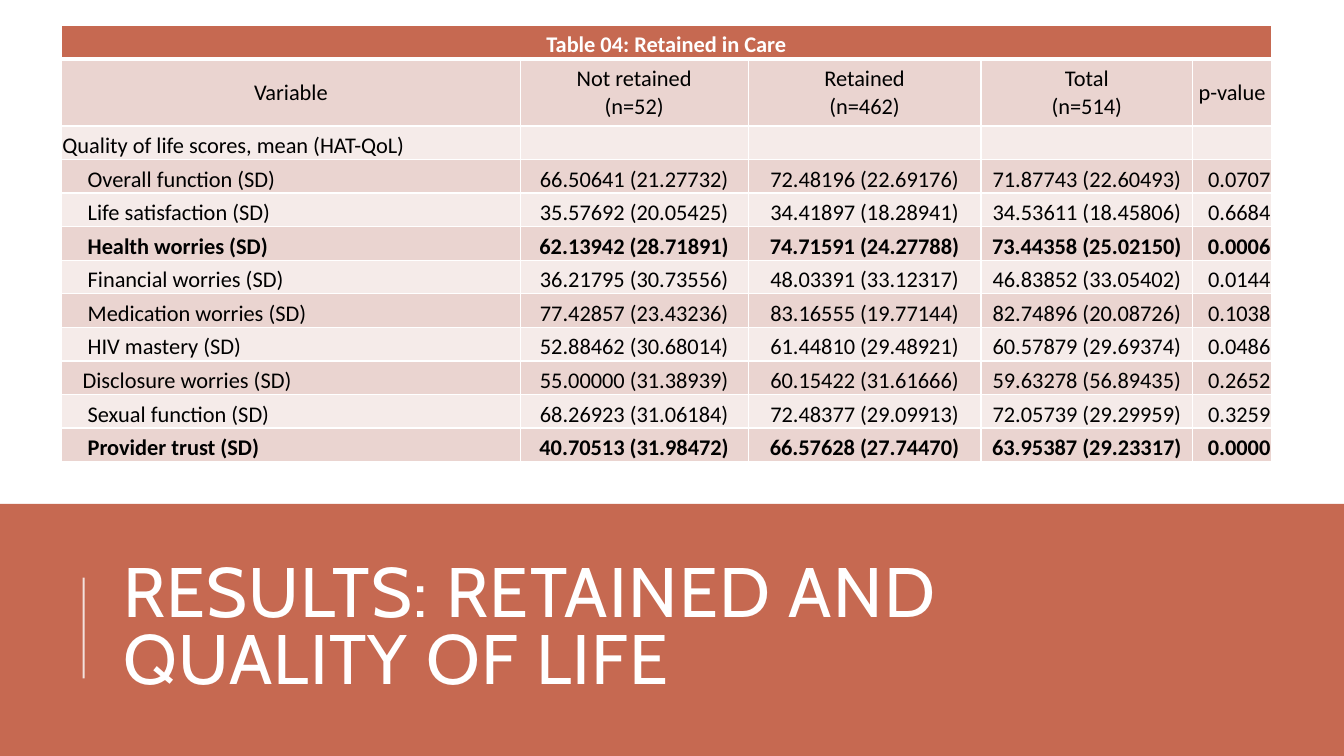
from lxml.etree import SubElement
from pptx import Presentation
from pptx.dml.color import RGBColor
from pptx.enum.shapes import MSO_CONNECTOR, MSO_SHAPE
from pptx.enum.text import MSO_ANCHOR, MSO_AUTO_SIZE, PP_ALIGN
from pptx.oxml import parse_xml
from pptx.oxml.ns import nsdecls, qn
from pptx.util import Inches, Pt

RUST = RGBColor(0xC6, 0x69, 0x51)
ROSE = RGBColor(0xEA, 0xD4, 0xD0)
PALE = RGBColor(0xF5, 0xEB, 0xE9)
WHITE = RGBColor(0xFF, 0xFF, 0xFF)
BLACK = RGBColor(0, 0, 0)

TITLE = "RESULTS: RETAINED AND QUALITY OF LIFE"
CAPTION = "Table 04: Retained in Care"
HEADS = ["Variable", "Not retained\n(n=52)", "Retained\n(n=462)", "Total\n(n=514)", "p-value"]
GROUP = ["Quality of life scores, mean (HAT-QoL)", "", "", "", ""]
SCORES = [
    ["Overall function (SD)", "66.50641 (21.27732)", "72.48196 (22.69176)", "71.87743 (22.60493)", "0.0707"],
    ["Life satisfaction (SD)", "35.57692 (20.05425)", "34.41897 (18.28941)", "34.53611 (18.45806)", "0.6684"],
    ["Health worries (SD)", "62.13942 (28.71891)", "74.71591 (24.27788)", "73.44358 (25.02150)", "0.0006"],
    ["Financial worries (SD)", "36.21795 (30.73556)", "48.03391 (33.12317)", "46.83852 (33.05402)", "0.0144"],
    ["Medication worries (SD)", "77.42857 (23.43236)", "83.16555 (19.77144)", "82.74896 (20.08726)", "0.1038"],
    ["HIV mastery (SD)", "52.88462 (30.68014)", "61.44810 (29.48921)", "60.57879 (29.69374)", "0.0486"],
    ["Disclosure worries (SD)", "55.00000 (31.38939)", "60.15422 (31.61666)", "59.63278 (56.89435)", "0.2652"],
    ["Sexual function (SD)", "68.26923 (31.06184)", "72.48377 (29.09913)", "72.05739 (29.29959)", "0.3259"],
    ["Provider trust (SD)", "40.70513 (31.98472)", "66.57628 (27.74470)", "63.95387 (29.23317)", "0.0000"],
]
WIDTHS = [4.55, 2.26, 2.31, 2.1, 0.78]
ALIGNS = [PP_ALIGN.LEFT] + [PP_ALIGN.CENTER] * 3 + [PP_ALIGN.RIGHT]
HEIGHT = Inches(4.33)


def apply(item, form):
    for name, value in form.items():
        setattr(item, name, value)


def style(para, size, face, color, bold=False):
    for run in para.runs:
        apply(run.font, {"size": Pt(size), "name": face, "bold": bold})
        run.font.color.rgb = color


def add_band(slide, width):
    band = slide.shapes.add_shape(MSO_SHAPE.RECTANGLE, 0, Inches(5), width, Inches(2.5))
    band.shadow.inherit = False
    band.fill.solid()
    band.fill.fore_color.rgb = RUST
    band.line.fill.background()
    slide.shapes.element.insert(2, band.element)


def set_title(slide):
    title = slide.shapes.title
    apply(title, {"left": Inches(1.12), "top": Inches(5.44),
                  "width": Inches(10.63), "height": Inches(1.64)})
    frame = title.text_frame
    frame.text = TITLE
    apply(frame, {"word_wrap": True, "auto_size": MSO_AUTO_SIZE.NONE,
                  "vertical_anchor": MSO_ANCHOR.MIDDLE})
    para = frame.paragraphs[0]
    apply(para, {"alignment": PP_ALIGN.LEFT, "line_spacing": 0.8})
    style(para, 50, "Cabin", WHITE)
    for props in title.element.iter(qn("a:rPr")):
        props.set("spc", "100")


def add_rule(slide):
    x = Inches(0.83)
    rule = slide.shapes.add_connector(MSO_CONNECTOR.STRAIGHT, x, Inches(6.73), x, Inches(5.73))
    rule.line.width = Pt(1.5)
    rule.line.color.rgb = WHITE
    props = rule.element.spPr
    SubElement(props.find(".//" + qn("a:srgbClr")), qn("a:alpha"), val="80000")
    SubElement(props, qn("a:effectLst"))


def fill_cell(cell, text, color, align, anchor=MSO_ANCHOR.BOTTOM, ink=BLACK, bold=False, indent=0):
    apply(cell, {"margin_left": Inches(0.01 + indent), "margin_right": Inches(0.01),
                 "margin_top": Inches(0.01), "margin_bottom": 0, "vertical_anchor": anchor})
    cell.fill.solid()
    cell.fill.fore_color.rgb = color
    para = cell.text_frame.paragraphs[0]
    para.text = text
    para.alignment = align
    style(para, 16, "Calibri", ink, bold)


def add_edges(frame):
    for row, line in enumerate(frame.element.iter(qn("a:tr"))):
        sides = {"L": 1, "R": 1, "T": 3 if row == 1 else 1, "B": 1 if row else 3}
        for props in line.iter(qn("a:tcPr")):
            for spot, (side, width) in enumerate(sides.items()):
                props.insert(spot, parse_xml(
                    f'<a:ln{side} {nsdecls("a")} w="{Pt(width)}"><a:solidFill>'
                    f'<a:srgbClr val="{WHITE}"/></a:solidFill></a:ln{side}>'))


def add_scores(slide):
    rows = [HEADS, GROUP] + SCORES
    frame = slide.shapes.add_table(len(rows) + 1, len(WIDTHS), Inches(0.61), Inches(0.25),
                                   Inches(12), HEIGHT)
    table = frame.table
    for col, width in zip(table.columns, WIDTHS):
        col.width = Inches(width)
    unit = HEIGHT // (len(rows) + 2)
    for spot, row in enumerate(table.rows):
        row.height = unit * 2 if spot == 1 else unit
    for cell in table.rows[0].cells:
        fill_cell(cell, "", RUST, PP_ALIGN.CENTER)
    top = table.cell(0, 0)
    top.merge(table.cell(0, len(WIDTHS) - 1))
    fill_cell(top, CAPTION, RUST, PP_ALIGN.CENTER, ink=WHITE, bold=True)
    for spot, row in enumerate(rows, 1):
        color = ROSE if spot % 2 else PALE
        score = row in SCORES
        bold = score and float(row[-1]) < 0.001
        for col, text in enumerate(row):
            cell = table.cell(spot, col)
            if row is HEADS:
                fill_cell(cell, text, color, PP_ALIGN.CENTER, MSO_ANCHOR.MIDDLE)
            else:
                indent = 0
                if score and col == 0:
                    indent = 0.2 if text.startswith("Disclosure") else 0.25
                fill_cell(cell, text, color, ALIGNS[col], bold=bold, indent=indent)
    add_edges(frame)


def main():
    deck = Presentation()
    apply(deck, {"slide_width": Inches(13.33), "slide_height": Inches(7.5)})
    slide = deck.slides.add_slide(deck.slide_layouts[5])
    add_band(slide, deck.slide_width)
    set_title(slide)
    add_rule(slide)
    add_scores(slide)
    deck.save("out.pptx")


if __name__ == "__main__":
    main()
